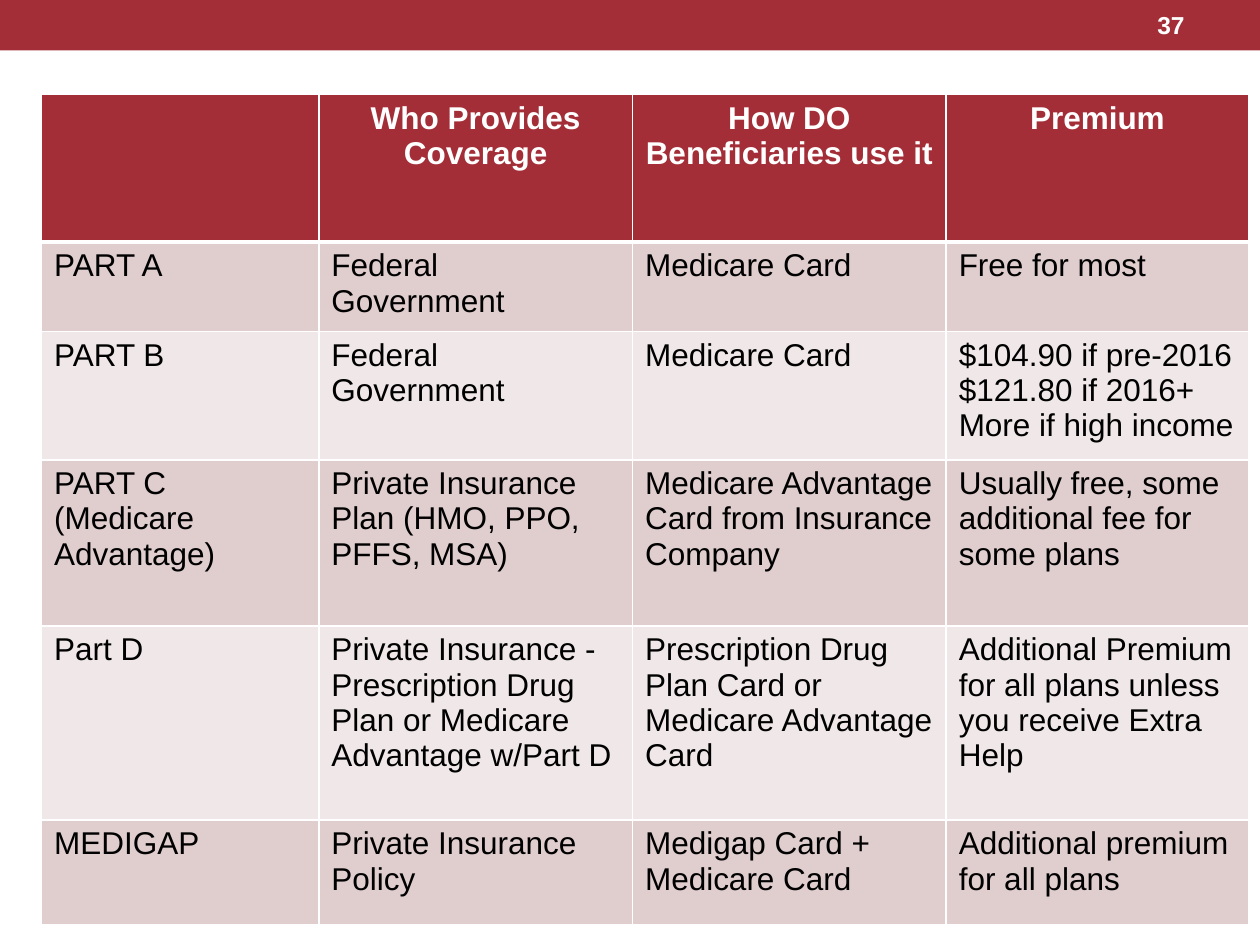
from lxml import etree
from pptx import Presentation
from pptx.dml.color import RGBColor
from pptx.enum.shapes import MSO_SHAPE
from pptx.enum.text import MSO_ANCHOR, PP_ALIGN
from pptx.oxml.ns import qn
from pptx.util import Inches, Pt

RECT = MSO_SHAPE.RECTANGLE
MIDDLE = MSO_ANCHOR.MIDDLE
LEFT, CENTER, RIGHT = PP_ALIGN.LEFT, PP_ALIGN.CENTER, PP_ALIGN.RIGHT

THEME = {
    "font": "Arial", "body": 18, "number": 14,
    "red": "A32E37", "white": "FFFFFF", "black": "000000",
    "bands": ("F0E8E8", "E0CDCE"),
}
COLS = (2.2, 2.49, 2.49, 2.4)
ROWS = (1.17, 0.71, 1.02, 1.32, 1.54, 0.83)
CELLS = (
    ("", "Who Provides Coverage", "How DO Beneficiaries use it", "Premium"),
    ("PART A", "Federal Government", "Medicare Card", "Free for most"),
    ("PART B", "Federal Government", "Medicare Card",
     "$104.90 if pre-2016 $121.80 if 2016+\nMore if high income"),
    ("PART C (Medicare Advantage)",
     "Private Insurance Plan (HMO, PPO, PFFS, MSA)",
     "Medicare Advantage Card from Insurance Company",
     "Usually free, some additional fee for some plans"),
    ("Part D",
     "Private Insurance - Prescription Drug Plan or Medicare Advantage w/Part D",
     "Prescription Drug Plan Card or Medicare Advantage Card",
     "Additional Premium for all plans unless you receive Extra Help"),
    ("MEDIGAP", "Private Insurance Policy", "Medigap Card + Medicare Card",
     "Additional premium for all plans"),
)


def write(frame, text, size, color, bold, align):
    for i, line in enumerate(text.split("\n")):
        para = frame.add_paragraph() if i else frame.paragraphs[0]
        para.alignment = align
        if not line:
            continue
        run = para.add_run()
        run.text = line
        run.font.name = THEME["font"]
        run.font.size = Pt(size)
        run.font.bold = bold
        run.font.color.rgb = RGBColor.from_string(color)


def border(cell, widths):
    """Draw white cell edges; widths maps L, R, T, B to points, in that order."""
    props = cell._tc.get_or_add_tcPr()
    for side, width in widths.items():
        line = etree.SubElement(props, qn(f"a:ln{side}"), w=str(Pt(width)))
        fill = etree.SubElement(line, qn("a:solidFill"))
        etree.SubElement(fill, qn("a:srgbClr"), val=THEME["white"])


deck = Presentation()
deck.slide_width, deck.slide_height = Inches(10), Inches(7.5)
slide = deck.slides.add_slide(deck.slide_layouts[6])

# Top band
band = slide.shapes.add_shape(RECT, 0, 0, deck.slide_width, Inches(0.4))
band.shadow.inherit = False
band.fill.solid()
band.fill.fore_color.rgb = RGBColor.from_string(THEME["red"])
band.line.fill.background()

# Coverage table
table = slide.shapes.add_table(
    len(ROWS), len(COLS), Inches(0.33), Inches(0.75),
    Inches(sum(COLS)), Inches(sum(ROWS))).table
for c, width in enumerate(COLS):
    table.columns[c].width = Inches(width)
for r, height in enumerate(ROWS):
    table.rows[r].height = Inches(height)
    head = r == 0
    back = THEME["red"] if head else THEME["bands"][r % 2]
    ink = THEME["white"] if head else THEME["black"]
    edges = {"L": 1, "R": 1, "T": 3 if r == 1 else 1, "B": 3 if head else 1}
    for c, text in enumerate(CELLS[r]):
        cell = table.cell(r, c)
        border(cell, edges)
        cell.fill.solid()
        cell.fill.fore_color.rgb = RGBColor.from_string(back)
        write(cell.text_frame, text, THEME["body"], ink, head,
              CENTER if head else LEFT)

# Slide number
box = slide.shapes.add_textbox(
    Inches(8.33), Inches(0.02), Inches(1.17), Inches(0.36))
box.text_frame.word_wrap = True
box.text_frame.vertical_anchor = MIDDLE
write(box.text_frame, "37", THEME["number"], THEME["white"], True, RIGHT)

deck.save("out.pptx")
